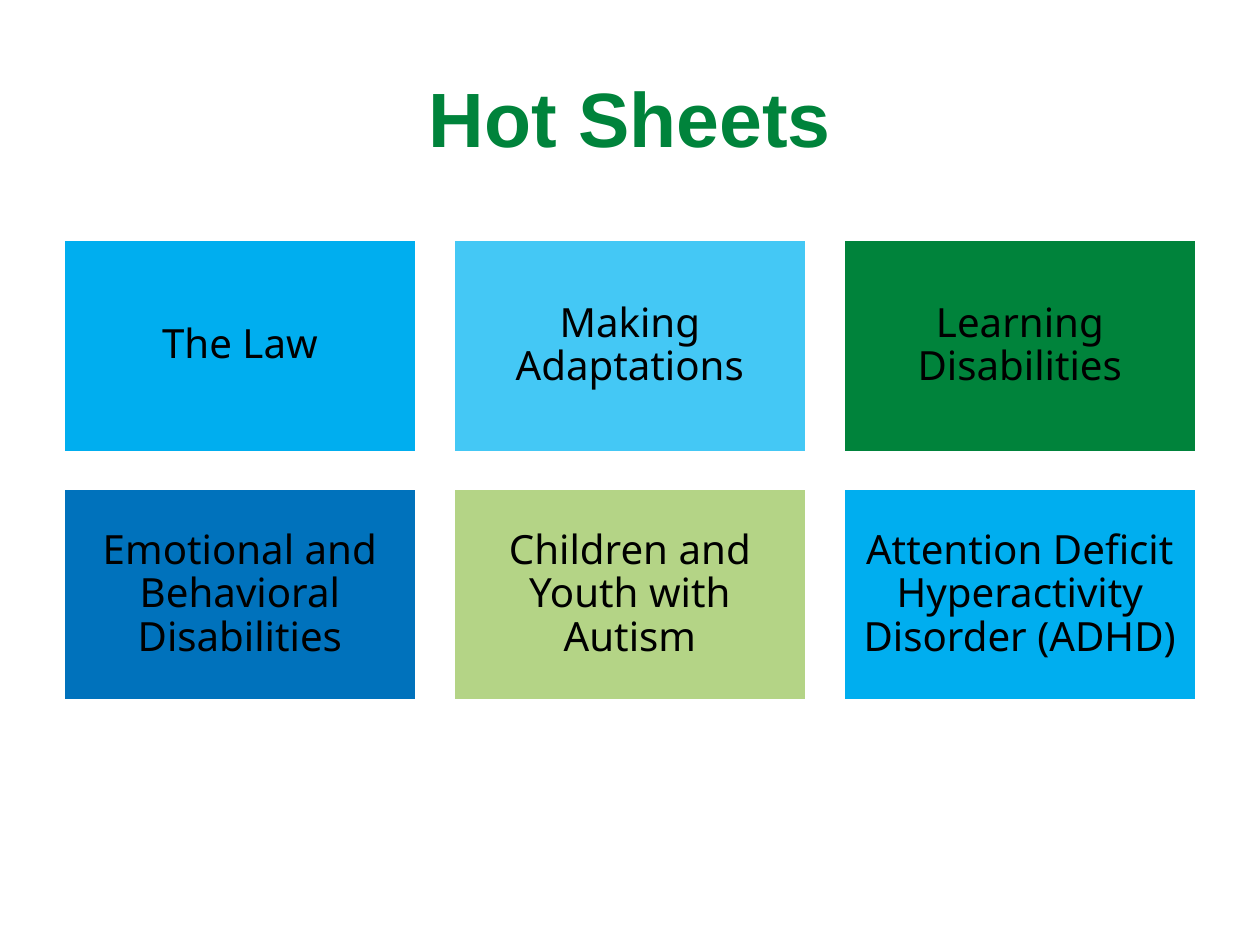
from pptx import Presentation
from pptx.dml.color import RGBColor
from pptx.enum.shapes import MSO_SHAPE
from pptx.enum.text import MSO_ANCHOR, PP_ALIGN
from pptx.util import Inches, Pt

RECT = MSO_SHAPE.RECTANGLE
MIDDLE = MSO_ANCHOR.MIDDLE
CENTER = PP_ALIGN.CENTER


def color(code):
    return RGBColor.from_string(code)


def write(shape, text, font, size, code, bold=False):
    frame = shape.text_frame
    frame.word_wrap = True
    frame.vertical_anchor = MIDDLE
    frame.text = text
    para = frame.paragraphs[0]
    para.alignment = CENTER
    run = para.runs[0].font
    run.name, run.size, run.bold = font, Pt(size), bold
    run.color.rgb = color(code)
    return frame


prs = Presentation()
prs.slide_width, prs.slide_height = Inches(10), Inches(7.5)
slide = prs.slides.add_slide(prs.slide_layouts[6])

# Title
title = slide.shapes.add_textbox(Inches(0.5), Inches(0.3), Inches(9), Inches(1.25))
write(title, "Hot Sheets", "Arial", 44, "00833B", bold=True)

# Topic tiles, three to a row
tiles = [
    ("The Law", "00AEEF"),
    ("Making Adaptations", "44C8F5"),
    ("Learning Disabilities", "00833B"),
    ("Emotional and Behavioral Disabilities", "0072BC"),
    ("Children and Youth with Autism", "B4D486"),
    ("Attention Deficit Hyperactivity Disorder (ADHD)", "00AEEF"),
]
cols, left, top = 3, 0.5, 1.9
wide, high, gap = 2.81, 1.69, 0.285

for i, (topic, fill) in enumerate(tiles):
    row, col = divmod(i, cols)
    tile = slide.shapes.add_shape(
        RECT,
        Inches(left + col * (wide + gap)),
        Inches(top + row * (high + gap)),
        Inches(wide),
        Inches(high),
    )
    tile.shadow.inherit = False
    tile.fill.solid()
    tile.fill.fore_color.rgb = color(fill)
    tile.line.color.rgb = color("FFFFFF")
    tile.line.width = Pt(2)
    frame = write(tile, topic, "Noto Sans", 23, "000000")
    frame.margin_left = frame.margin_right = Inches(0.1)
    frame.margin_top = frame.margin_bottom = Inches(0.1)
    frame.paragraphs[0].line_spacing = 0.9

prs.save("out.pptx")
